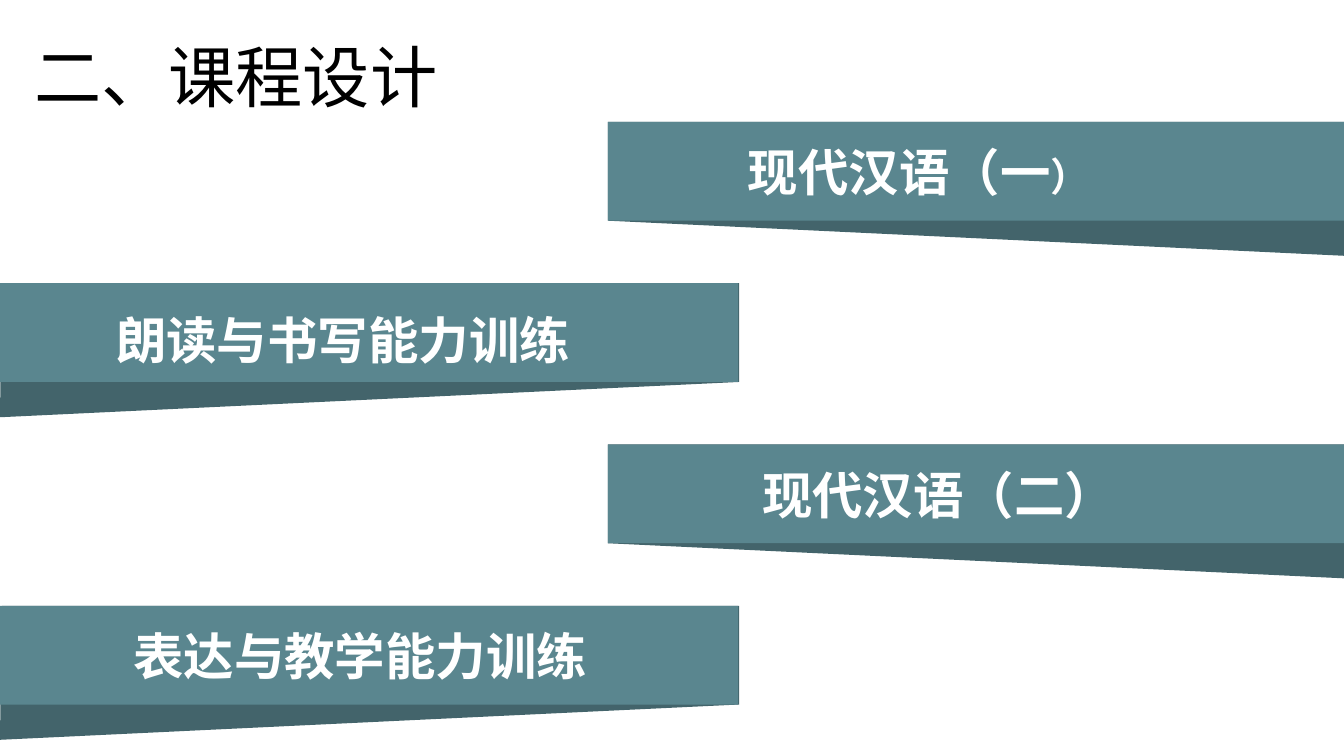
from dataclasses import dataclass

from lxml.etree import SubElement
from pptx import Presentation
from pptx.dml.color import RGBColor
from pptx.enum.shapes import MSO_SHAPE as Preset
from pptx.enum.text import MSO_AUTO_SIZE as AutoSize, PP_ALIGN as Align
from pptx.oxml.ns import qn
from pptx.util import Pt

PX = 9144  # EMU in one px, 100 px to the inch
FACE, FOLD, WHITE, BLACK = "5A868F", "43646B", "FFFFFF", "000000"
RIBBON_TOP, RIBBON_PITCH = 121, 160
RIBBON_WIDTH, RIBBON_HEIGHT, FOLD_DEPTH = 732, 98, 133


@dataclass(frozen=True)
class Side:
    face_left: int
    outer_top: int
    inner: int
    outer_bottom: int


@dataclass(frozen=True)
class Label:
    left: int
    top: int
    width: int
    height: int
    runs: tuple[tuple[str, int], ...]  # text and size in points
    font: str = "Noto Sans CJK SC"
    color: str = WHITE
    bold: bool = True
    wrap: bool = True
    align: Align = Align.LEFT


@dataclass(frozen=True)
class Ribbon:
    side: Side
    label: Label


RIGHT = Side(603, 1335, 603, 1337)
LEFT = Side(0, 2, 733, 0)

RIBBONS = [
    Ribbon(RIGHT, Label(732, 135, 359, 71, (("现代汉语（一", 36), ("）", 28)), wrap=False)),
    Ribbon(LEFT, Label(57, 302, 518, 71, (("朗读与书写能力训练", 36),), align=Align.RIGHT)),
    Ribbon(RIGHT, Label(746, 455, 370, 71, (("现代汉语（二）", 36),), wrap=False)),
    Ribbon(LEFT, Label(97, 615, 495, 71, (("表达与教学能力训练", 36),), align=Align.RIGHT)),
]
TITLE = Label(24, 30, 428, 91, (("二、课程设计", 48),), "Arial", BLACK, bold=False)


def rgb(color: str) -> RGBColor:
    return RGBColor.from_string(color)


def paint(shape, color: str) -> None:
    shape.shadow.inherit = False
    shape.fill.solid()
    shape.fill.fore_color.rgb = rgb(color)
    shape.line.fill.background()


def add_label(page, label: Label) -> None:
    box = page.shapes.add_textbox(
        label.left * PX, label.top * PX, label.width * PX, label.height * PX)
    frame = box.text_frame
    frame.word_wrap = label.wrap
    frame.auto_size = AutoSize.SHAPE_TO_FIT_TEXT
    para = frame.paragraphs[0]
    para.alignment = label.align
    font = para.font
    font.name = label.font
    font.bold = label.bold
    font.color.rgb = rgb(label.color)
    for text, size in label.runs:
        span = para.add_run()
        span.text = text
        span.font.size = Pt(size)
        # East Asian typeface
        SubElement(span.font._element, qn("a:ea"), typeface=label.font)


def add_ribbon(page, ribbon: Ribbon, top: int) -> None:
    side = ribbon.side
    # Dark fold behind the face
    builder = page.shapes.build_freeform(side.outer_top, top, scale=PX)
    builder.add_line_segments([
        (side.inner, top),
        (side.inner, top + RIBBON_HEIGHT),
        (side.outer_bottom, top + FOLD_DEPTH),
    ], close=True)
    paint(builder.convert_to_shape(), FOLD)
    # Face
    face = page.shapes.add_shape(
        Preset.RECTANGLE, side.face_left * PX, top * PX,
        RIBBON_WIDTH * PX, RIBBON_HEIGHT * PX)
    paint(face, FACE)
    add_label(page, ribbon.label)


def main() -> None:
    deck = Presentation()
    deck.slide_width, deck.slide_height = 1333 * PX, 750 * PX
    page = deck.slides.add_slide(deck.slide_layouts[6])
    for row, ribbon in enumerate(RIBBONS):
        add_ribbon(page, ribbon, RIBBON_TOP + row * RIBBON_PITCH)
    add_label(page, TITLE)
    deck.save("out.pptx")


if __name__ == "__main__":
    main()
